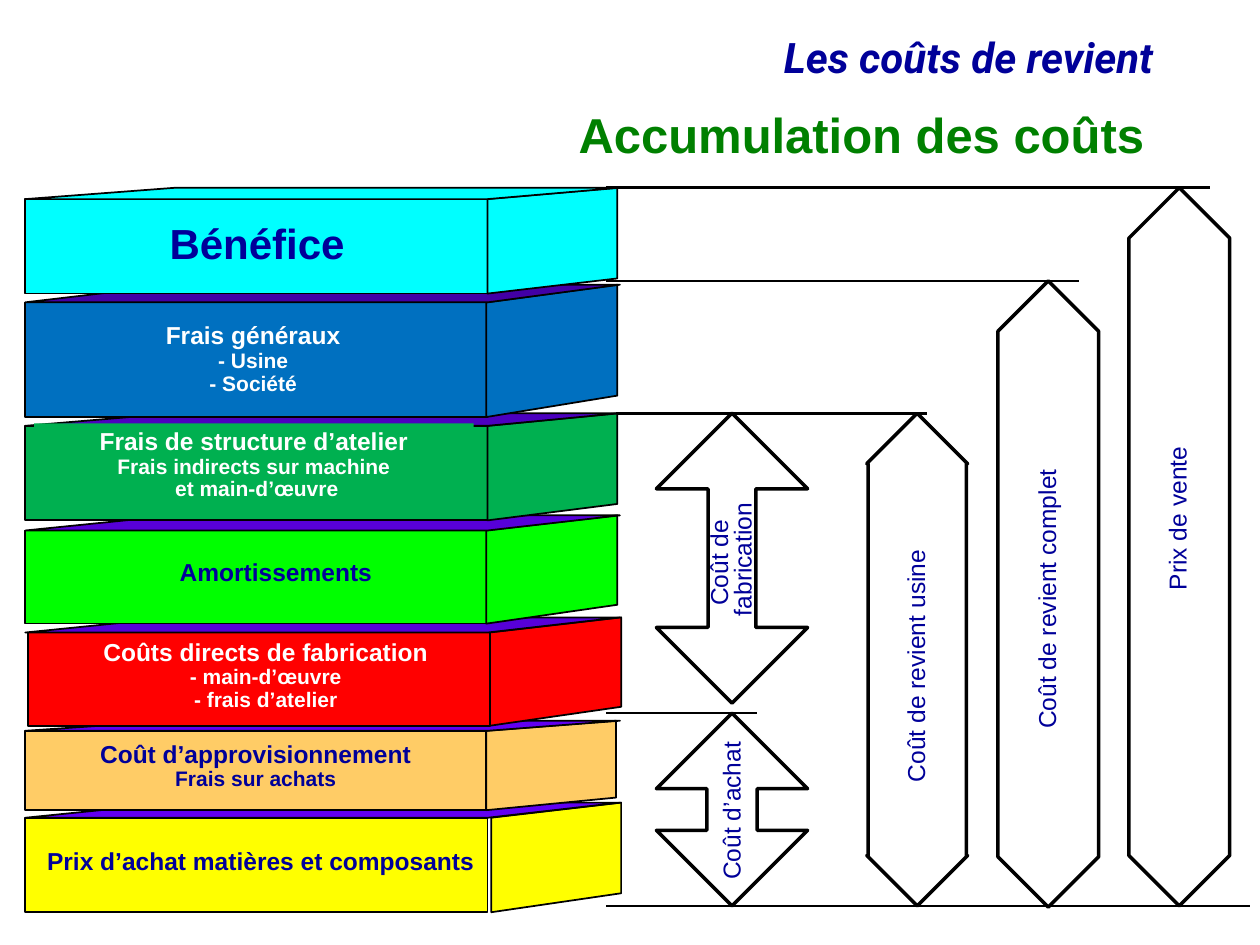
from copy import deepcopy

from lxml import etree
from pptx import Presentation, util as u
from pptx.dml.color import RGBColor
from pptx.enum import shapes, text
from pptx.oxml.ns import qn

PX = 9144  # EMU per px, 100 px to the inch
COLOURS = {
    "navy": "000099", "heading": "008000", "black": "000000", "white": "FFFFFF",
    "yellow": "FFFF00", "orange": "FFCC66", "red": "FF0000", "lime": "00FF00",
    "green": "00B050", "blue": "0070C0", "cyan": "00FFFF",
    "violet1": "6100F2", "violet2": "5700D9", "violet3": "4C00BF", "violet4": "4200A6",
}


def px(*lengths):
    return [u.Emu(length * PX) for length in lengths]


def rgb(name):
    return RGBColor.from_string(COLOURS[name])


class CostSlide:
    font = "Arial"
    lid_left, lid_front, lid_back_left, lid_back_right = 20, 387, 139, 492

    def __init__(self, slide):
        self.slide = slide
        self.shapes = slide.shapes

    def paint(self, shape, fill=None, line=None, width=1):
        shape.shadow.inherit = False
        if fill:
            shape.fill.solid()
            shape.fill.fore_color.rgb = rgb(fill)
        else:
            shape.fill.background()
        if line:
            shape.line.color.rgb = rgb(line)
            shape.line.width = u.Pt(width)
        else:
            shape.line.fill.background()

    def caption(self, shape, lines, colour, bold=False, italic=False, font=None,
                align=text.PP_ALIGN.CENTER, spacing=0.9, anchor=text.MSO_ANCHOR.TOP,
                fit=text.MSO_AUTO_SIZE.SHAPE_TO_FIT_TEXT):
        """Set (wording, size) lines in one paragraph."""
        frame = shape.text_frame
        frame.word_wrap = True
        frame.auto_size = fit
        frame.vertical_anchor = anchor
        paragraph = frame.paragraphs[0]
        paragraph.alignment = align
        paragraph.line_spacing = spacing
        for number, (wording, size) in enumerate(lines):
            if number:
                paragraph.add_line_break()
                line_break = paragraph._p.findall(qn("a:br"))[-1]
                line_break.append(deepcopy(run._r.rPr))
            run = paragraph.add_run()
            run.text = wording
            run.font.name = font or self.font
            run.font.size = u.Pt(size)
            run.font.bold = bold
            run.font.italic = italic
            run.font.color.rgb = rgb(colour)

    def title(self, box, wording, size):
        heading = self.shapes.title
        heading.left, heading.top, heading.width, heading.height = px(*box)
        self.caption(heading, [(wording, size)], "heading", bold=True,
                     align=text.PP_ALIGN.RIGHT, anchor=text.MSO_ANCHOR.MIDDLE,
                     fit=text.MSO_AUTO_SIZE.NONE)

    def label(self, box, lines, colour="navy", turn=0, **style):
        label = self.shapes.add_textbox(*px(*box))
        label.rotation = turn
        self.caption(label, lines, colour, **style)

    def rectangle(self, box, fill, line=None):
        rectangle = self.shapes.add_shape(shapes.MSO_SHAPE.RECTANGLE, *px(*box))
        self.paint(rectangle, fill, line)
        return rectangle

    def outline(self, points, fill):
        builder = self.shapes.build_freeform(*points[0], scale=PX)
        builder.add_line_segments(points[1:], close=True)
        self.paint(builder.convert_to_shape(), fill, "black")

    def block(self, face, side, back, low, colour, lid, box, lines, ink, plate=False):
        """A slab: front face, right side, lid and its caption."""
        left, top, width, height = face
        near, far = side
        bottom = top + height
        self.rectangle(face, colour, "black")
        self.outline([(near, top), (near, bottom), (far, low), (far, back)], colour)
        self.outline([(self.lid_left, top), (self.lid_front, top),
                      (self.lid_back_right, back), (self.lid_back_left, back)], lid)
        if plate:
            self.caption(self.rectangle(box, colour), lines, ink, bold=True)
        else:
            self.label(box, lines, ink, bold=True)

    def level(self, start, end, y):
        level = self.shapes.add_connector(shapes.MSO_CONNECTOR.STRAIGHT,
                                          *px(start, y, end, y))
        level.line.color.rgb = rgb("black")
        level.line.width = u.Pt(1.5)
        etree.SubElement(level._element.spPr, qn("a:effectLst"))

    def span(self, box, head):
        span = self.shapes.add_shape(shapes.MSO_SHAPE.UP_DOWN_ARROW, *px(*box))
        span.adjustments[0] = 0.5
        span.adjustments[1] = head / box[2]
        self.paint(span, line="black", width=2)


# face, side (near, far), back y, low y, colour, lid, caption box, lines, ink, plate
BLOCKS = [
    ((20, 649, 367, 75), (390, 493), 637, 709, "yellow", "violet1", (27, 669, 360, 31),
     [("Prix d’achat matières et composants", 14)], "navy"),
    ((20, 580, 366, 63), (386, 489), 572, 633, "orange", "violet1", (43, 584, 320, 54),
     [("Coût d’approvisionnement", 14), ("Frais sur achats", 12)], "navy"),
    ((22, 502, 367, 74), (389, 493), 490, 561, "red", "violet2", (51, 503, 320, 68),
     [("Coûts directs de fabrication", 14), ("- main-d’œuvre", 12),
      ("- frais d’atelier", 12)], "white"),
    ((20, 421, 367, 74), (386, 490), 409, 480, "lime", "violet2", (59, 440, 320, 34),
     [("Amortissements", 14)], "navy"),
    ((20, 338, 367, 75), (387, 490), 328, 400, "green", "violet3", (27, 336, 349, 68),
     [("Frais de structure d’atelier", 14), ("Frais indirects sur machine", 12),
      (" et main-d’œuvre", 12)], "white", True),
    ((20, 240, 367, 91), (386, 490), 226, 314, "blue", "violet4", (41, 252, 320, 68),
     [("Frais généraux", 14), ("- Usine", 12), ("- Société", 12)], "white"),
    ((20, 158, 367, 75), (387, 490), 149, 221, "cyan", "cyan", (45, 172, 318, 40),
     [("Bénéfice", 24)], "navy", True),
]
LEVELS = [(481, 601, 566), (489, 736, 328), (481, 856, 223), (481, 960, 149),
          (481, 992, 719)]
# arrow box, head length, caption box, lines, line spacing
SPANS = [
    ((521, 566, 120, 153), 40, (497, 629, 171, 29), ["Coût d’achat"], 0.8),
    ((521, 328, 120, 230), 38, (468, 420, 228, 48), ["Coût de ", "fabrication"], 0.8),
    ((688, 328, 80, 391), 78, (560, 512, 338, 33), ["Coût de revient usine"], 0.9),
    ((792, 223, 80, 497), 99, (632, 459, 402, 33), ["Coût de revient complet"], 0.9),
    ((896, 149, 80, 570), 114, (757, 395, 359, 33), ["Prix de vente"], 0.9),
]


def main():
    deck = Presentation()
    deck.slide_width, deck.slide_height = px(1000, 750)
    costs = CostSlide(deck.slides.add_slide(deck.slide_layouts[5]))

    # Headings
    costs.label((125, 25, 800, 46), [("Les coûts de revient", 24)], bold=True,
                italic=True, font="Roboto", align=text.PP_ALIGN.RIGHT)
    costs.title((126, 84, 792, 50), "Accumulation des coûts", 28)

    # Purchase blocks, behind the levels
    for block in BLOCKS[:2]:
        costs.block(*block)

    # Cost levels and the spans between them
    for level in LEVELS:
        costs.level(*level)
    for arrow, head, box, lines, spacing in SPANS:
        costs.span(arrow, head)
        costs.label(box, [(line, 14) for line in lines], turn=270, spacing=spacing)

    # Remaining blocks, in front of the levels
    for block in BLOCKS[2:]:
        costs.block(*block)

    deck.save("out.pptx")


if __name__ == "__main__":
    main()
